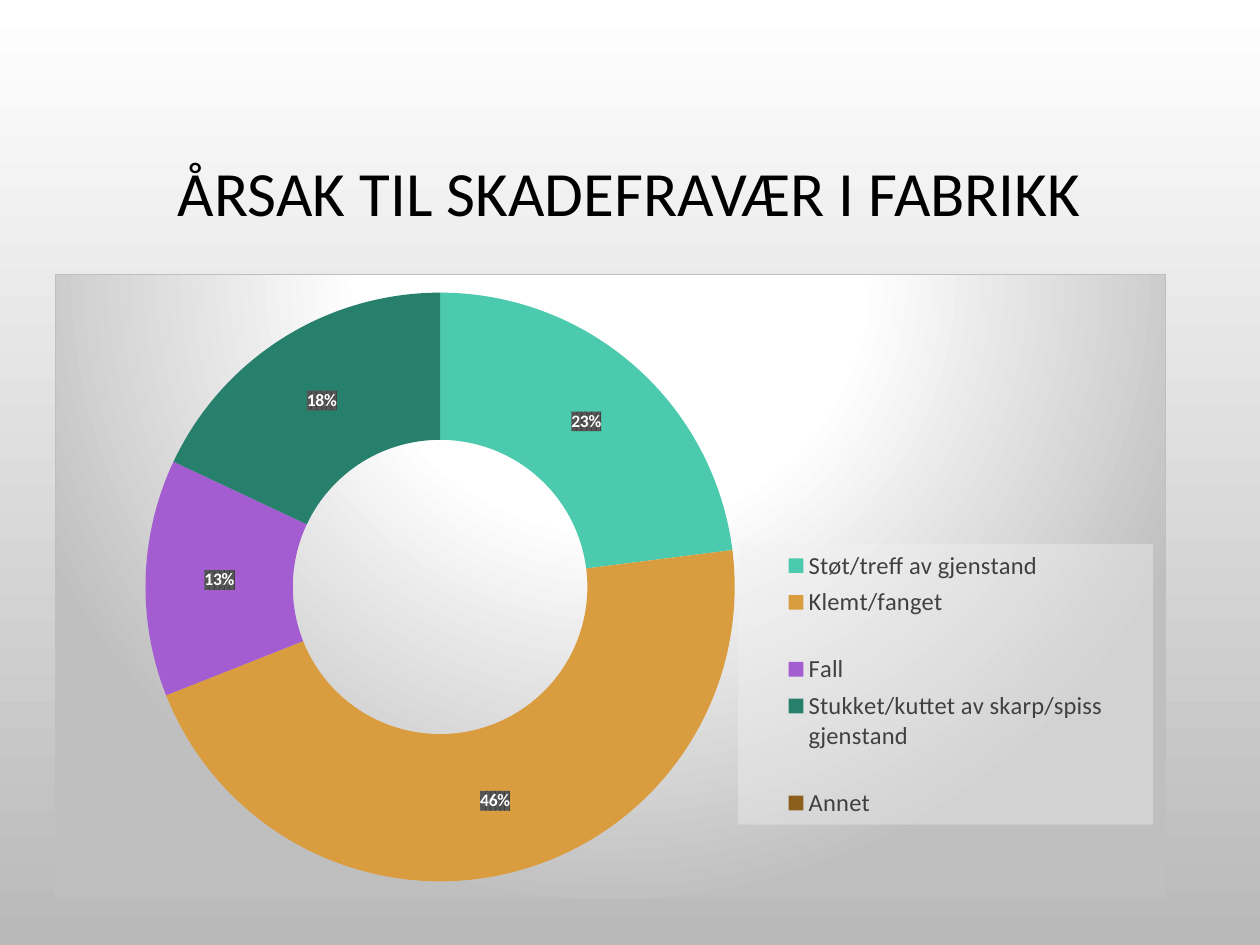
from lxml import etree
from pptx import Presentation, util as u
from pptx.chart import data as chart_data
from pptx.dml.color import RGBColor
from pptx.enum import chart as charts, text
from pptx.oxml import ns

PX = u.Inches(1) // 126
THEME = {
    "font": "Calibri",
    "title_size": 36, "label_size": 10, "legend_size": 14,
    "black": "000000", "white": "FFFFFF", "legend_text": "404040",
    "background_end": "B9B9B9", "frame": "BFBFBF", "legend_fill": "F2F2F2",
    "label_dark": "404040", "label_light": "595959",
}
CAUSES = [
    ("Støt/treff av gjenstand", 23, "4BCAAD"),
    ("Klemt/fanget\n", 46, "D99C3F"),
    ("Fall", 13, "A35DD1"),
    ("Stukket/kuttet av skarp/spiss gjenstand\n", 18, "26806C"),
    ("Annet", 0, "8C601C"),
]
CHART_BOX = (55, 274, 1111, 625)
RING_BOX = (145, 292, 590, 590)
LEGEND_BOX = (738, 544, 416, 281)


def chart_xml(body):
    return etree.fromstring(f'<c:{body[0]} {ns.nsdecls("c", "a")}>{body[1]}</c:{body[0]}>')


def manual_layout(box, inner=""):
    """Place a chart part, given in slide px, as fractions of the chart frame."""
    left, top, width, height = CHART_BOX
    fractions = {"x": (box[0] - left) / width, "y": (box[1] - top) / height,
                 "w": box[2] / width, "h": box[3] / height}
    modes = '<c:xMode val="edge"/><c:yMode val="edge"/>'
    values = "".join(f'<c:{key} val="{value:.3f}"/>' for key, value in fractions.items())
    return chart_xml(("layout", f"<c:manualLayout>{inner}{modes}{values}</c:manualLayout>"))


presentation = Presentation()
presentation.slide_width, presentation.slide_height = u.Inches(10), u.Inches(7.5)
slide = presentation.slides.add_slide(presentation.slide_layouts[6])

background = slide.background.fill
background.gradient()
background.gradient_angle = 270
for stop, color in zip(background.gradient_stops, ("white", "background_end")):
    stop.color.rgb = RGBColor.from_string(THEME[color])

# Title
title = slide.shapes.add_textbox(*(n * PX for n in (94, 86, 1071, 220)))
title.text_frame.word_wrap = True
title.text_frame.vertical_anchor = text.MSO_ANCHOR.MIDDLE
title.text_frame.text = "ÅRSAK TIL SKADEFRAVÆR I FABRIKK"
paragraph = title.text_frame.paragraphs[0]
paragraph.alignment = text.PP_ALIGN.CENTER
paragraph.line_spacing = 0.9

# Doughnut chart
causes = chart_data.CategoryChartData()
causes.categories = [name for name, _, _ in CAUSES]
causes.add_series("Series 1", [share for _, share, _ in CAUSES])
chart = slide.shapes.add_chart(
    charts.XL_CHART_TYPE.DOUGHNUT, *(n * PX for n in CHART_BOX), causes).chart
chart.has_title = False
plot = chart.plots[0]
plot.vary_by_categories = True
for index, (_, _, color) in enumerate(CAUSES):
    fill = plot.series[0].points[index].format.fill
    fill.solid()
    fill.fore_color.rgb = RGBColor.from_string(color)

plot.has_data_labels = True
labels = plot.data_labels
labels.show_percentage = True
labels.show_value = False
labels.number_format = "0%"
labels.number_format_is_linked = False
labels.font.bold = True

chart.has_legend = True
legend = chart.legend
legend.position = charts.XL_LEGEND_POSITION.RIGHT
legend.include_in_layout = False

for font, size, color in (
    (paragraph.runs[0].font, "title_size", "black"),
    (chart.font, "label_size", "black"),
    (labels.font, "label_size", "white"),
    (legend.font, "legend_size", "legend_text"),
):
    font.name = THEME["font"]
    font.size = u.Pt(THEME[size])
    font.color.rgb = RGBColor.from_string(THEME[color])

# Positions and fills of the chart parts
chart_space = chart._chartSpace
plot_area = chart_space.find(ns.qn("c:chart")).find(ns.qn("c:plotArea"))
for part in (plot_area, legend._element):
    for layout in part.findall(ns.qn("c:layout")):
        part.remove(layout)
plot_area.insert(0, manual_layout(RING_BOX, '<c:layoutTarget val="inner"/>'))
legend._element.find(ns.qn("c:overlay")).addprevious(manual_layout(LEGEND_BOX))

stops = "".join(
    f'<a:gs pos="{position}000"><a:srgbClr val="{THEME[color]}"/></a:gs>'
    for position, color in ((0, "white"), (39, "white"), (100, "frame")))
frame_fill = (
    f'<a:gradFill><a:gsLst>{stops}</a:gsLst><a:path path="circle">'
    '<a:fillToRect l="50000" t="-80000" r="50000" b="180000"/></a:path></a:gradFill>'
    f'<a:ln w="9525"><a:solidFill><a:srgbClr val="{THEME["frame"]}"/></a:solidFill></a:ln>')
legend_fill = (f'<a:solidFill><a:srgbClr val="{THEME["legend_fill"]}">'
               '<a:alpha val="39000"/></a:srgbClr></a:solidFill>')
label_fill = (f'<a:pattFill prst="pct75"><a:fgClr><a:srgbClr val="{THEME["label_dark"]}"/></a:fgClr>'
              f'<a:bgClr><a:srgbClr val="{THEME["label_light"]}"/></a:bgClr></a:pattFill>')
for element, fill in ((chart_space, frame_fill), (legend._element, legend_fill),
                      (labels._element, label_fill)):
    element.find(ns.qn("c:txPr")).addprevious(chart_xml(("spPr", fill)))

presentation.save("out.pptx")
